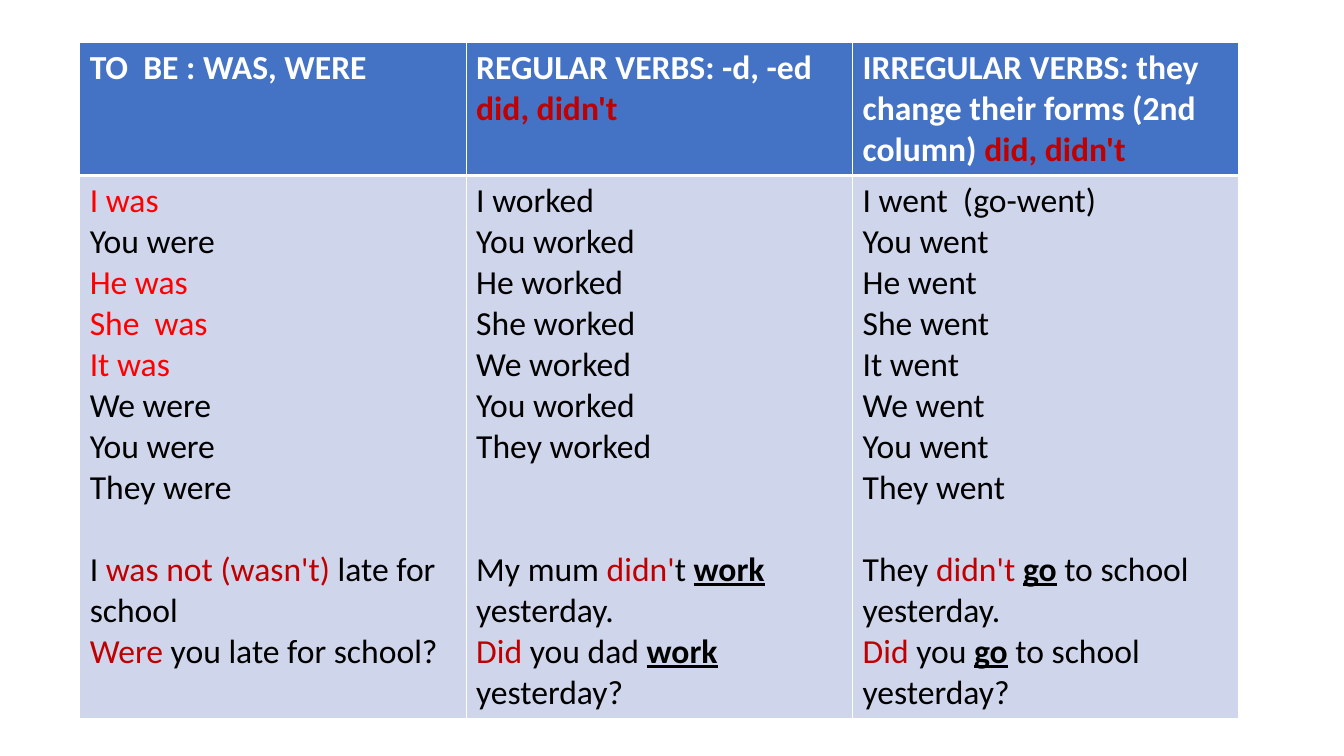
"""Builds a slide with a table that compares past simple verb forms."""
from dataclasses import dataclass

from lxml.etree import SubElement
from pptx import Presentation
from pptx.dml.color import RGBColor as RGB
from pptx.oxml.ns import qn
from pptx.util import Inches, Pt

HEADERS = [
    [[("TO  BE : WAS, WERE", "head")]],
    [[("REGULAR VERBS: -d, -ed", "head")], [("did, didn't", "head_accent")]],
    [[("IRREGULAR VERBS: they change their forms (2nd  column) ", "head"),
      ("did, didn't", "head_accent")]],
]
FORMS = [
    [("I was ", "was"), ("You were", "plain"), ("He was", "was"), ("She  was", "was"),
     ("It was", "was"), ("We were", "plain"), ("You were", "plain"), ("They were", "plain")],
    [(f"{who} worked", "plain") for who in ("I", "You", "He", "She", "We", "You", "They")],
    [("I went  (go-went)", "plain")]
    + [(f"{who} went", "plain") for who in ("You", "He", "She", "It", "We", "You", "They")],
]
EXAMPLES = [
    [[("I ", "plain"), ("was not (wasn't)", "accent"), (" late for school", "plain")],
     [("Were", "accent"), (" you late for school?", "plain")]],
    [[("My mum ", "plain"), ("didn'", "accent"), ("t ", "plain"), ("work", "verb"),
      (" yesterday.", "plain")],
     [("Did ", "accent"), ("you dad ", "plain"), ("work", "verb"), (" yesterday?", "plain")]],
    [[("They ", "plain"), ("didn't ", "accent"), ("go", "verb"),
      (" to school yesterday.", "plain")],
     [("Did", "accent"), (" you ", "plain"), ("go", "verb"), (" to school yesterday?", "plain")]],
]
EXAMPLES_LINE = 9


@dataclass(frozen=True)
class Theme:
    font: str = "Calibri"
    size: float = 24
    line: float = 29.3
    white: str = "FFFFFF"
    black: str = "000000"
    red: str = "FF0000"
    accent: str = "C00000"
    head_fill: str = "4472C4"
    body_fill: str = "CFD5EA"
    thin: float = 1
    thick: float = 3


THEME = Theme()
STYLES = {
    "head": (THEME.white, True, False),
    "head_accent": (THEME.accent, True, False),
    "plain": (THEME.black, False, False),
    "was": (THEME.red, False, False),
    "accent": (THEME.accent, False, False),
    "verb": (THEME.black, True, True),
}


def write(tf, paragraphs):
    for i, runs in enumerate(paragraphs):
        p = tf.add_paragraph() if i else tf.paragraphs[0]
        for text, style in runs:
            r = p.add_run()
            r.text = text
            color, bold, underline = STYLES[style]
            r.font.name, r.font.size = THEME.font, Pt(THEME.size)
            r.font.bold, r.font.underline = bold, underline
            r.font.color.rgb = RGB.from_string(color)


def paint(cell, fill, top, bottom):
    tc_pr = cell._tc.get_or_add_tcPr()
    for side, width in (("L", THEME.thin), ("R", THEME.thin), ("T", top), ("B", bottom)):
        ln = SubElement(tc_pr, qn(f"a:ln{side}"), w=str(Pt(width)))
        SubElement(SubElement(ln, qn("a:solidFill")), qn("a:srgbClr"), val=THEME.white)
    cell.fill.solid()
    cell.fill.fore_color.rgb = RGB.from_string(fill)


def main():
    prs = Presentation()
    prs.slide_width, prs.slide_height = Inches(13.33), Inches(7.5)
    s = prs.slides.add_slide(prs.slide_layouts[6])
    heights = (1.32, 5.38)
    table = s.shapes.add_table(2, len(HEADERS), Inches(0.79), Inches(0.42),
                               Inches(11.5), Inches(sum(heights))).table
    for row, height in zip(table.rows, heights):
        row.height = Inches(height)
    for col, (header, forms, examples) in enumerate(zip(HEADERS, FORMS, EXAMPLES)):
        head, body = table.cell(0, col), table.cell(1, col)
        paint(head, THEME.head_fill, THEME.thin, THEME.thick)
        paint(body, THEME.body_fill, THEME.thick, THEME.thin)
        write(head.text_frame, header)
        write(body.text_frame, [[form] for form in forms] + examples)
        first_example = body.text_frame.paragraphs[len(forms)]
        first_example.space_before = Pt(THEME.line * (EXAMPLES_LINE - len(forms)))
    prs.save("out.pptx")


if __name__ == "__main__":
    main()
